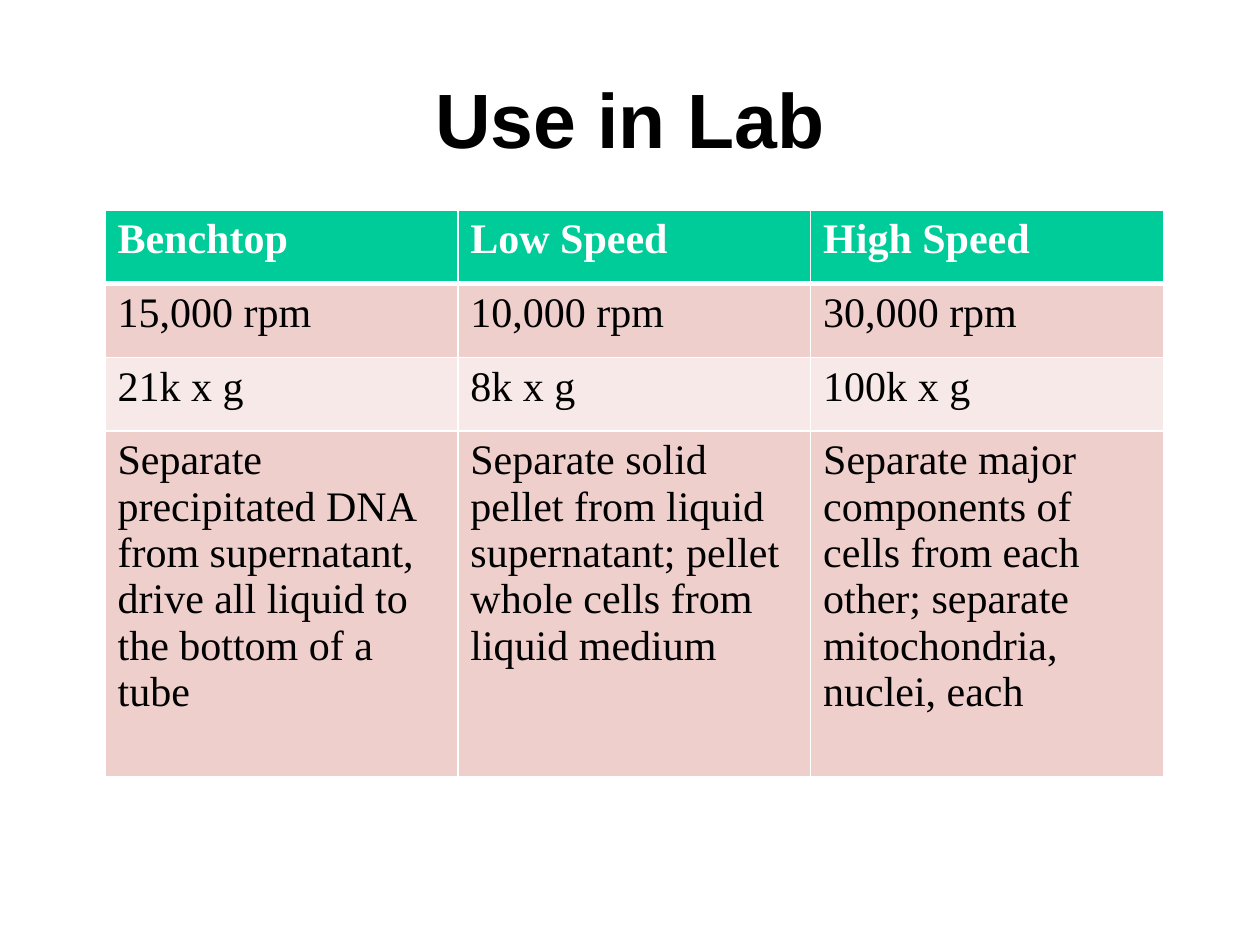
from pptx import Presentation
from pptx.dml.color import RGBColor as Rgb
from pptx.enum.text import MSO_ANCHOR as Anchor, PP_ALIGN as Align
from pptx.oxml.ns import qn
from pptx.util import Inches, Pt
from lxml.etree import SubElement as Sub

HUES = {
    "ink": "000000",
    "white": "FFFFFF",
    "head": "00CC99",
    "dark": "EFCFCC",
    "light": "F7E9E7",
}

ROWS = [
    ["Benchtop", "Low Speed", "High Speed"],
    ["15,000 rpm", "10,000 rpm", "30,000 rpm"],
    ["21k x g", "8k x g", "100k x g"],
    [
        "Separate precipitated DNA from supernatant, drive all liquid to the bottom of a tube",
        "Separate solid pellet from liquid supernatant; pellet whole cells from liquid medium",
        "Separate major components of cells from each other; separate mitochondria, nuclei, each",
    ],
]


class Deck:
    def __init__(self, wide, high):
        self.prs = Presentation()
        self.prs.slide_width = Inches(wide)
        self.prs.slide_height = Inches(high)
        self.slide = self.prs.slides.add_slide(self.prs.slide_layouts[5])

    def box(self, left, top, wide, high):
        w, h = self.prs.slide_width, self.prs.slide_height
        return int(left * w), int(top * h), int(wide * w), int(high * h)

    def style(self, para, face, size, hue, bold):
        for run in para.runs:
            font = run.font
            font.name, font.size, font.bold = face, Pt(size), bold
            font.color.rgb = Rgb.from_string(HUES[hue])

    def title(self, text, *share):
        shape = self.slide.shapes.title
        shape.left, shape.top, shape.width, shape.height = self.box(*share)
        frame = shape.text_frame
        frame.text = text
        frame.vertical_anchor = Anchor.MIDDLE
        para = frame.paragraphs[0]
        para.alignment = Align.CENTER
        self.style(para, "Arial", 44, "ink", True)

    def edge(self, cell, side, width):
        line = Sub(cell._tc.get_or_add_tcPr(), qn(f"a:ln{side}"), w=str(Pt(width)))
        fill = Sub(line, qn("a:solidFill"))
        Sub(fill, qn("a:srgbClr"), val=HUES["white"])

    def cell(self, cell, text, row):
        head = row == 0
        widths = {"L": 1, "R": 1, "T": 3 if row == 1 else 1, "B": 3 if head else 1}
        for side, width in widths.items():
            self.edge(cell, side, width)
        tint = "head" if head else "dark" if row % 2 else "light"
        cell.fill.solid()
        cell.fill.fore_color.rgb = Rgb.from_string(HUES[tint])
        cell.text_frame.text = text
        hue = "white" if head else "ink"
        self.style(cell.text_frame.paragraphs[0], "Times New Roman", 24, hue, head)

    def table(self, rows, parts, *share):
        box = self.box(*share)
        grid = self.slide.shapes.add_table(len(rows), len(rows[0]), *box).table
        for row, part in zip(grid.rows, parts):
            row.height = int(box[3] * part)
        for i, row in enumerate(rows):
            for j, text in enumerate(row):
                self.cell(grid.cell(i, j), text, i)

    def save(self):
        self.prs.save("out.pptx")


def main():
    deck = Deck(10, 7.5)
    deck.title("Use in Lab", 0.08, 0.09, 0.84, 0.07)
    low = 0.13
    deck.table(ROWS, [low, low, low, 1 - 3 * low], 1 / 12, 2 / 9, 0.84, 0.6)
    deck.save()


if __name__ == "__main__":
    main()
